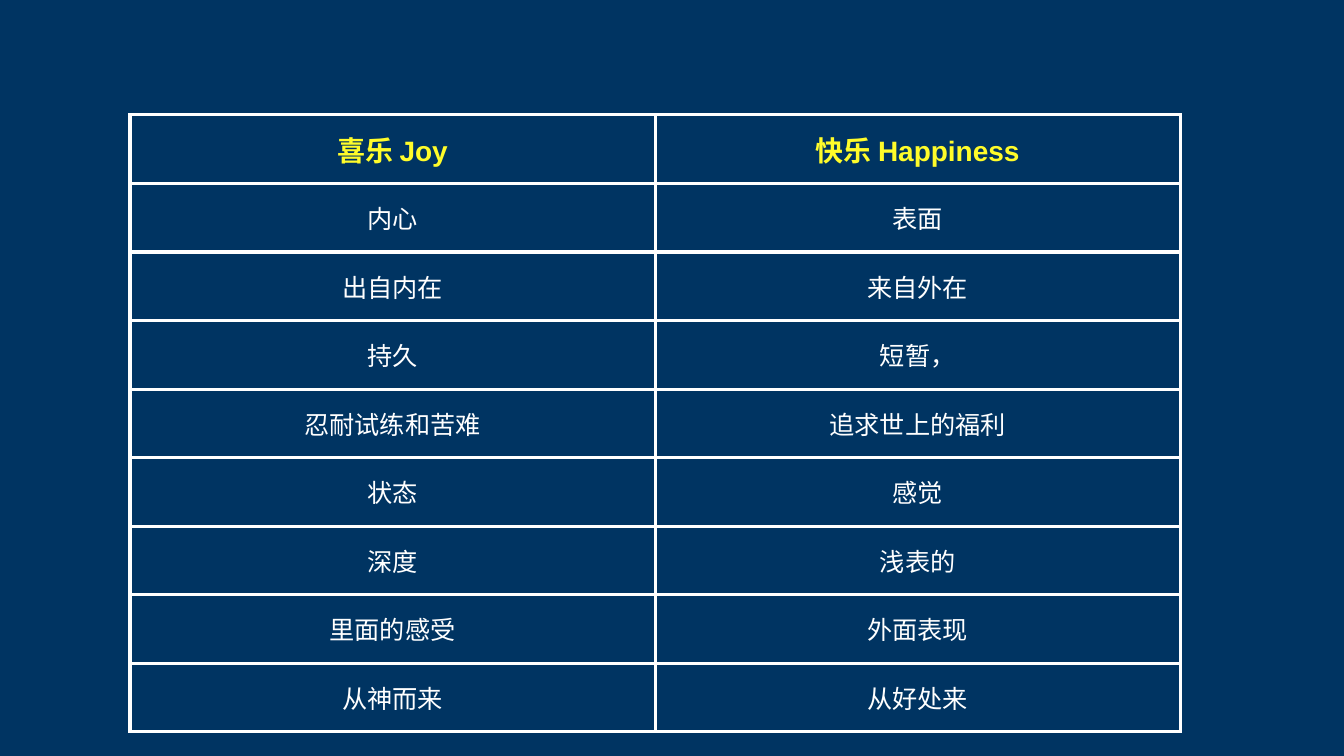
from lxml import etree
from pptx import Presentation
from pptx import util as u
from pptx.dml.color import RGBColor
from pptx.enum import text
from pptx.oxml.ns import qn

ROWS = [
    ("喜乐 Joy", "快乐 Happiness"),
    ("内心", "表面"),
    ("出自内在", "来自外在"),
    ("持久", "短暂，"),
    ("忍耐试练和苦难", "追求世上的福利"),
    ("状态", "感觉"),
    ("深度", "浅表的"),
    ("里面的感受", "外面表现"),
    ("从神而来", "从好处来"),
]

THEME = {
    "font": "Arial",
    "navy": "003462",
    "white": "FFFFFF",
    "yellow": "FFFC2A",
    "head_pt": 40,
    "body_pt": 36,
    "border_pt": 5,
}
LEFT, TOP = 2.58, 2.28
COL_W, ROW_H, MARGIN = 10.42, 1.36, 0.06


def rgb(name):
    return RGBColor.from_string(THEME[name])


def add_borders(cell):
    """Rule all four sides; line elements must precede the fill in tcPr."""
    tc_pr = cell._tc.get_or_add_tcPr()
    for i, side in enumerate(("lnL", "lnR", "lnT", "lnB")):
        ln = etree.Element(qn(f"a:{side}"), w=str(u.Pt(THEME["border_pt"])))
        fill = etree.SubElement(ln, qn("a:solidFill"))
        etree.SubElement(fill, qn("a:srgbClr"), val=THEME["white"])
        tc_pr.insert(i, ln)


def fill_cell(cell, words, is_head):
    cell.fill.solid()
    cell.fill.fore_color.rgb = rgb("navy")
    cell.vertical_anchor = text.MSO_ANCHOR.MIDDLE
    cell.margin_left = cell.margin_right = u.Inches(MARGIN)
    cell.margin_top = cell.margin_bottom = u.Inches(MARGIN)
    add_borders(cell)
    p = cell.text_frame.paragraphs[0]
    p.text = words
    p.alignment = text.PP_ALIGN.CENTER
    p.font.name = THEME["font"]
    p.font.size = u.Pt(THEME["head_pt" if is_head else "body_pt"])
    p.font.bold = is_head
    p.font.color.rgb = rgb("yellow" if is_head else "white")


def main():
    prs = Presentation()
    prs.slide_width, prs.slide_height = u.Inches(26.67), u.Inches(15)
    s = prs.slides.add_slide(prs.slide_layouts[6])
    s.background.fill.solid()
    s.background.fill.fore_color.rgb = rgb("navy")

    n_rows, n_cols = len(ROWS), len(ROWS[0])
    table = s.shapes.add_table(
        n_rows, n_cols, u.Inches(LEFT), u.Inches(TOP),
        u.Inches(n_cols * COL_W), u.Inches(n_rows * ROW_H)).table
    table.horz_banding = False
    for col in table.columns:
        col.width = u.Inches(COL_W)
    for row in table.rows:
        row.height = u.Inches(ROW_H)
    for i, row in enumerate(ROWS):
        for j, words in enumerate(row):
            fill_cell(table.cell(i, j), words, is_head=i == 0)

    prs.save("out.pptx")


if __name__ == "__main__":
    main()
